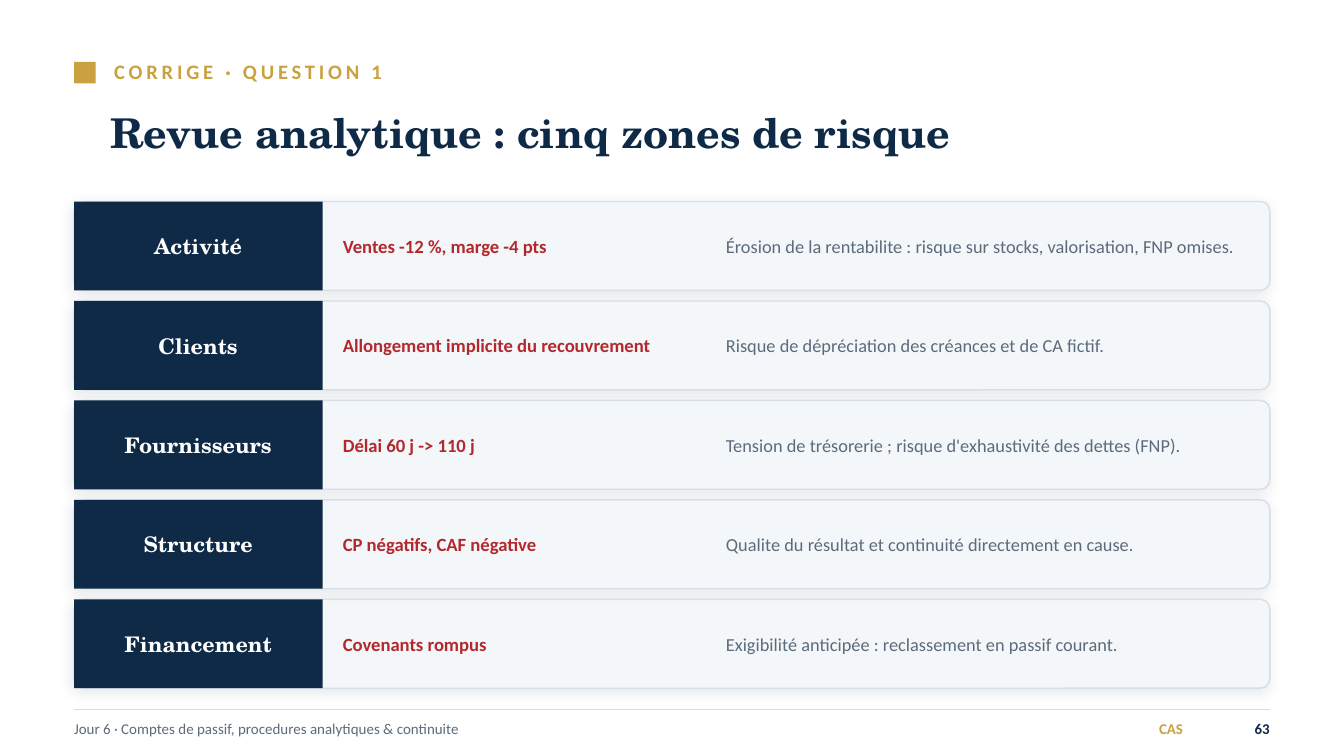
"""Build the slide on the five risk zones of the analytical review."""
from dataclasses import dataclass

import lxml.etree
import pptx
import pptx.dml.color
import pptx.enum.shapes
import pptx.enum.text
import pptx.oxml
import pptx.oxml.ns
import pptx.util

Cm = pptx.util.Cm
Pt = pptx.util.Pt
SHAPE = pptx.enum.shapes.MSO_SHAPE
ALIGN = pptx.enum.text.PP_ALIGN

COLOURS = {
    "gold": "C9A23F",
    "navy": "0E2A47",
    "grey": "5B6B7B",
    "red": "B3282D",
    "rule": "D7DEE6",
    "card": "F4F7FA",
    "shadow": "1B2A3A",
    "white": "FFFFFF",
}
SANS = "Calibri"
SERIF = "TeX Gyre Schola"

LEFT = 1.4
WIDTH = 22.6
ROW_TOP = 3.81
ROW_HEIGHT = 1.68
ROW_PITCH = 1.88
LABEL_WIDTH = 4.7
FOOTER_TOP = 13.46
FOOTER_HEIGHT = 0.64


@dataclass(frozen=True)
class Frame:
    """Position and size in centimetres."""

    left: float
    top: float
    width: float
    height: float

    def lengths(self) -> tuple:
        """Return the four values as lengths."""
        return Cm(self.left), Cm(self.top), Cm(self.width), Cm(self.height)


@dataclass(frozen=True)
class Style:
    """Look of a line of text."""

    size: float
    colour: str
    font: str = SANS
    bold: bool = True
    align: ALIGN = ALIGN.LEFT
    spacing: float = 0


@dataclass(frozen=True)
class Zone:
    """Risk zone with its signal and its consequence."""

    name: str
    signal: str
    risk: str


EYEBROW = Style(11, "gold", spacing=2)
TITLE = Style(22, "navy", SERIF)
NAME = Style(11.5, "white", SERIF, align=ALIGN.CENTER)
SIGNAL = Style(10, "red")
RISK = Style(9.8, "grey", bold=False)
FOOTER = Style(8, "grey", bold=False)
SECTION = Style(8, "gold", align=ALIGN.RIGHT)
NUMBER = Style(8, "navy", align=ALIGN.RIGHT)

ZONES = [
    Zone("Activité", "Ventes -12 %, marge -4 pts",
         "Érosion de la rentabilite : risque sur stocks, valorisation, FNP omises."),
    Zone("Clients", "Allongement implicite du recouvrement",
         "Risque de dépréciation des créances et de CA fictif."),
    Zone("Fournisseurs", "Délai 60 j -> 110 j",
         "Tension de trésorerie ; risque d'exhaustivité des dettes (FNP)."),
    Zone("Structure", "CP négatifs, CAF négative",
         "Qualite du résultat et continuité directement en cause."),
    Zone("Financement", "Covenants rompus",
         "Exigibilité anticipée : reclassement en passif courant."),
]


def colour(name: str) -> pptx.dml.color.RGBColor:
    """Return a named colour."""
    return pptx.dml.color.RGBColor.from_string(COLOURS[name])


def add_text(page, text: str, frame: Frame, style: Style) -> None:
    """Add a line of text without margins, centred vertically."""
    box = page.shapes.add_textbox(*frame.lengths())
    body = box.text_frame
    body.word_wrap = True
    body.vertical_anchor = pptx.enum.text.MSO_ANCHOR.MIDDLE
    body.margin_left = body.margin_right = 0
    body.margin_top = body.margin_bottom = 0
    para = body.paragraphs[0]
    para.alignment = style.align
    para.font.name = style.font
    para.font.size = Pt(style.size)
    para.font.bold = style.bold
    para.font.color.rgb = colour(style.colour)
    span = para.add_run()
    span.text = text
    if style.spacing:
        span._r.get_or_add_rPr().set("spc", str(round(style.spacing * 100)))


def add_block(page, kind: SHAPE, frame: Frame, fill: str):
    """Add a filled shape without outline or shadow."""
    block = page.shapes.add_shape(kind, *frame.lengths())
    block.shadow.inherit = False
    block.fill.solid()
    block.fill.fore_color.rgb = colour(fill)
    block.line.fill.background()
    return block


def add_card(page, frame: Frame) -> None:
    """Add a rounded card with a thin outline and a soft shadow."""
    card = add_block(page, SHAPE.ROUNDED_RECTANGLE, frame, "card")
    card.adjustments[0] = 0.106
    card.line.color.rgb = colour("rule")
    card.line.width = Pt(0.75)
    effects = card._element.spPr.find(pptx.oxml.ns.qn("a:effectLst"))
    effects.append(pptx.oxml.parse_xml(
        f'<a:outerShdw {pptx.oxml.ns.nsdecls("a")} blurRad="{Pt(7)}" dist="{Pt(2)}" '
        f'dir="{135 * 60000}" algn="bl" rotWithShape="0">'
        f'<a:srgbClr val="{COLOURS["shadow"]}"><a:alpha val="10000"/></a:srgbClr>'
        "</a:outerShdw>"))


def add_zone(page, zone: Zone, top: float) -> None:
    """Add the row of one risk zone."""
    add_card(page, Frame(LEFT, top, WIDTH, ROW_HEIGHT))
    add_block(page, SHAPE.RECTANGLE, Frame(LEFT, top, LABEL_WIDTH, ROW_HEIGHT), "navy")
    add_text(page, zone.name, Frame(1.52, top, 4.45, ROW_HEIGHT), NAME)
    add_text(page, zone.signal, Frame(6.48, top, 6.99, ROW_HEIGHT), SIGNAL)
    add_text(page, zone.risk, Frame(13.72, top, 9.91, ROW_HEIGHT), RISK)


def add_header(page) -> None:
    """Add the marker, the eyebrow and the title."""
    add_block(page, SHAPE.RECTANGLE, Frame(LEFT, 1.17, 0.41, 0.41), "gold")
    add_text(page, "CORRIGE · QUESTION 1", Frame(2.16, 1.02, 21.84, 0.66), EYEBROW)
    add_text(page, "Revue analytique : cinq zones de risque",
             Frame(2.08, 1.65, 22.1, 1.68), TITLE)


def add_footer(page) -> None:
    """Add the rule and the three footer texts."""
    rule = page.shapes.add_connector(
        pptx.enum.shapes.MSO_CONNECTOR.STRAIGHT,
        Cm(LEFT), Cm(13.41), Cm(LEFT + WIDTH), Cm(13.41))
    rule.line.color.rgb = colour("rule")
    rule.line.width = Pt(0.75)
    lxml.etree.SubElement(rule._element.spPr, pptx.oxml.ns.qn("a:effectLst"))
    add_text(page, "Jour 6 · Comptes de passif, procedures analytiques & continuite",
             Frame(LEFT, FOOTER_TOP, 16.26, FOOTER_HEIGHT), FOOTER)
    add_text(page, "CAS", Frame(17.53, FOOTER_TOP, 4.83, FOOTER_HEIGHT), SECTION)
    add_text(page, "63", Frame(22.86, FOOTER_TOP, 1.14, FOOTER_HEIGHT), NUMBER)


def main() -> None:
    """Build and save the deck."""
    deck = pptx.Presentation()
    deck.slide_width, deck.slide_height = Cm(25.4), Cm(14.29)
    page = deck.slides.add_slide(deck.slide_layouts[6])
    add_header(page)
    add_footer(page)
    for index, zone in enumerate(ZONES):
        add_zone(page, zone, ROW_TOP + index * ROW_PITCH)
    deck.save("out.pptx")


if __name__ == "__main__":
    main()
